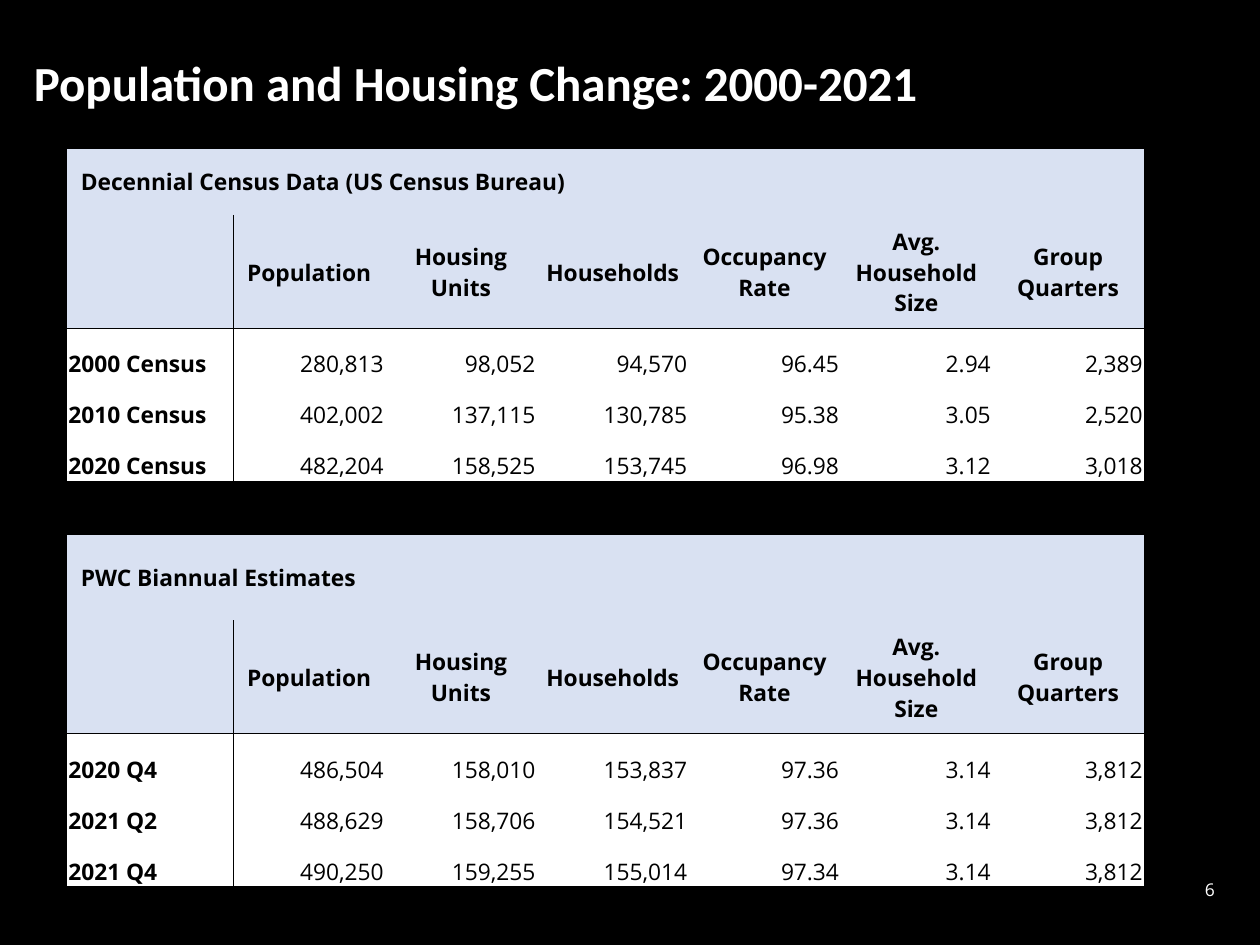
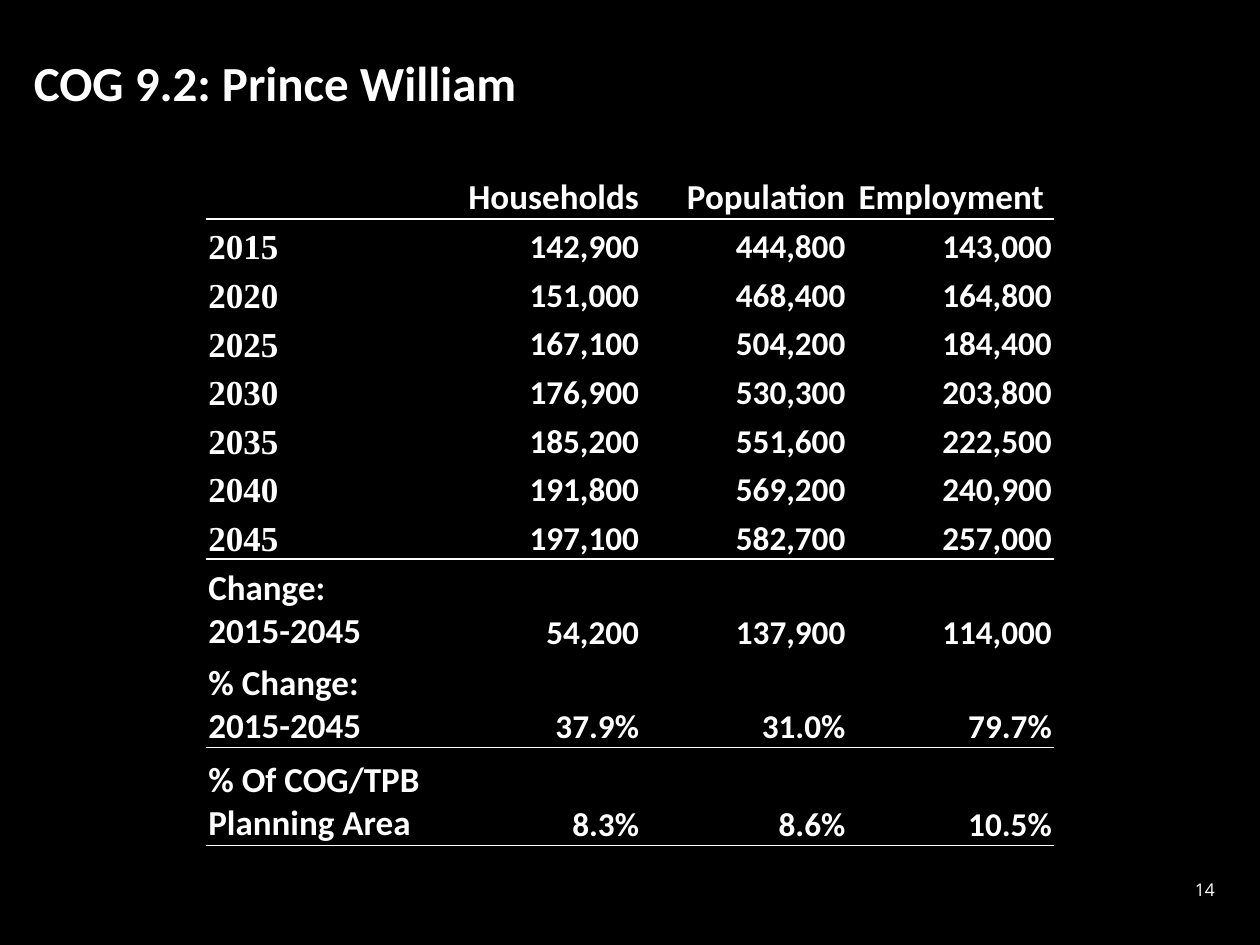
from dataclasses import dataclass, field

from lxml import etree
from pptx import Presentation
from pptx.dml import color
from pptx.enum import text as t
from pptx.oxml import ns
from pptx.util import Cm, Pt


@dataclass(frozen=True)
class Theme:
    black: str = "000000"
    white: str = "FFFFFF"
    header_fill: str = "D9E1F2"
    heading_font: str = "Calibri"
    body_font: str = "Open Sans"
    year_font: str = "Times New Roman"
    title_size: float = 28
    number_size: float = 10
    census_size: float = 13
    forecast_size: float = 20
    value_size: float = 19
    thin: float = 0.5
    rule: float = 1
    plain_table: str = "{2D5ABB26-0587-4C30-8999-92F81FD0307C}"


THEME = Theme()


@dataclass(frozen=True)
class Style:
    name: str
    size: float
    ink: str
    bold: bool = True
    align: t.PP_ALIGN = t.PP_ALIGN.LEFT
    anchor: t.MSO_ANCHOR = t.MSO_ANCHOR.BOTTOM


@dataclass(frozen=True)
class Edge:
    ink: str
    width: float


@dataclass(frozen=True)
class Look:
    style: Style
    margins: tuple[float, float, float, float]
    fill: str | None = None
    edges: dict[str, Edge] = field(default_factory=dict)


@dataclass(frozen=True)
class CensusBlock:
    heading: str
    span: int
    heading_height: float
    rows: list[list[str]]


RIGHT, CENTER = t.PP_ALIGN.RIGHT, t.PP_ALIGN.CENTER
MIDDLE = t.MSO_ANCHOR.MIDDLE

TITLE = Style(THEME.heading_font, THEME.title_size, THEME.white, anchor=t.MSO_ANCHOR.TOP)
NUMBER = Style(THEME.body_font, THEME.number_size, THEME.white, False, RIGHT, MIDDLE)

CENSUS = (THEME.body_font, THEME.census_size, THEME.black)
CENSUS_HEADING = Style(*CENSUS, anchor=MIDDLE)
CENSUS_COLUMN = Style(*CENSUS, align=CENTER, anchor=MIDDLE)
CENSUS_LABEL = Style(*CENSUS)
CENSUS_VALUE = Style(*CENSUS, bold=False, align=RIGHT)

FORECAST_COLUMN = Style(THEME.heading_font, THEME.forecast_size, THEME.white, align=RIGHT)
FORECAST_LABEL = Style(THEME.heading_font, THEME.forecast_size, THEME.white)
FORECAST_YEAR = Style(THEME.year_font, THEME.forecast_size, THEME.white)
FORECAST_VALUE = Style(THEME.heading_font, THEME.value_size, THEME.white, align=RIGHT)

HEADING_MARGINS = (0.28, 0.13, 0.28, 0.13)
CENSUS_MARGINS = (0.03, 0.03, 0.03, 0)
FORECAST_MARGINS = (0.05, 0.05, 0.05, 0)
EDGE_TAGS = ("lnL", "lnR", "lnT", "lnB")

CENSUS_COLUMNS = ["", "Population", "Housing Units", "Households",
                  "Occupancy Rate", "Avg. Household Size", "Group Quarters"]
CENSUS_BLOCKS = [
    CensusBlock("Decennial Census Data (US Census Bureau)", 4, 1.33, [
        ["2000 Census", "280,813", "98,052", "94,570", "96.45", "2.94", "2,389"],
        ["2010 Census", "402,002", "137,115", "130,785", "95.38", "3.05", "2,520"],
        ["2020 Census", "482,204", "158,525", "153,745", "96.98", "3.12", "3,018"],
    ]),
    CensusBlock("PWC Biannual Estimates", 2, 1.71, [
        ["2020 Q4", "486,504", "158,010", "153,837", "97.36", "3.14", "3,812"],
        ["2021 Q2", "488,629", "158,706", "154,521", "97.36", "3.14", "3,812"],
        ["2021 Q4", "490,250", "159,255", "155,014", "97.34", "3.14", "3,812"],
    ]),
]

FORECAST_ROWS = [
    ["", "Households", "Population", "Employment "],
    ["2015", "142,900", "444,800", "143,000"],
    ["2020", "151,000", "468,400", "164,800"],
    ["2025", "167,100", "504,200", "184,400"],
    ["2030", "176,900", "530,300", "203,800"],
    ["2035", "185,200", "551,600", "222,500"],
    ["2040", "191,800", "569,200", "240,900"],
    ["2045", "197,100", "582,700", "257,000"],
    ["Change:\v2015-2045", "54,200", "137,900", "114,000"],
    ["% Change:\v2015-2045", "37.9%", "31.0%", "79.7%"],
    ["% Of COG/TPB Planning Area", "8.3%", "8.6%", "10.5%"],
]
FORECAST_RULED = {0, 7, 9, 10}


def write(frame, words: str, style: Style) -> None:
    frame.text = words
    formats = {"name": style.name, "size": Pt(style.size), "bold": style.bold}
    for para in frame.paragraphs:
        para.alignment = style.align
        for span in para.runs:
            for key, value in formats.items():
                setattr(span.font, key, value)
            span.font.color.rgb = color.RGBColor.from_string(style.ink)


def place(box, left: float, top: float, width: float, height: float) -> None:
    for key, value in {"left": left, "top": top, "width": width, "height": height}.items():
        setattr(box, key, Cm(value))


def draw_edges(cell, edges: dict[str, Edge]) -> None:
    properties = cell._tc.get_or_add_tcPr()
    for index, tag in enumerate(EDGE_TAGS):
        line = etree.Element(ns.qn(f"a:{tag}"))
        edge = edges.get(tag)
        if edge:
            line.set("w", str(Pt(edge.width)))
            fill = etree.SubElement(line, ns.qn("a:solidFill"))
            etree.SubElement(fill, ns.qn("a:srgbClr"), val=edge.ink)
        else:
            line.set("w", "0")
            etree.SubElement(line, ns.qn("a:noFill"))
        properties.insert(index, line)


def draw_cell(cell, words: str, look: Look) -> None:
    sides = ("margin_left", "margin_top", "margin_right", "margin_bottom")
    for side, margin in zip(sides, look.margins):
        setattr(cell, side, Cm(margin))
    cell.vertical_anchor = look.style.anchor
    if words:
        write(cell.text_frame, words, look.style)
    if look.fill:
        cell.fill.solid()
        cell.fill.fore_color.rgb = color.RGBColor.from_string(look.fill)
    else:
        cell.fill.background()
    draw_edges(cell, look.edges)


def add_grid(page, left: float, top: float, widths: list[float], heights: list[float]):
    frame = page.shapes.add_table(len(heights), len(widths), Cm(left), Cm(top),
                                  Cm(sum(widths)), Cm(sum(heights)))
    table = frame.table
    for key in ("first_row", "horz_banding"):
        setattr(table, key, False)
    table._tbl.tblPr.find(ns.qn("a:tableStyleId")).text = THEME.plain_table
    for column, width in zip(table.columns, widths):
        column.width = Cm(width)
    for row, height in zip(table.rows, heights):
        row.height = Cm(height)
    return table


def add_page(deck, title: str, number: int):
    page = deck.slides.add_slide(deck.slide_layouts[5])
    box = page.shapes.title
    place(box, 0.43, 0.94, 23.7, 1.45)
    box.text_frame.vertical_anchor = TITLE.anchor
    box.text_frame.auto_size = t.MSO_AUTO_SIZE.SHAPE_TO_FIT_TEXT
    write(box.text_frame, title, TITLE)
    box = page.shapes.add_textbox(Cm(23.57), Cm(17.42), Cm(1.17), Cm(1.04))
    box.text_frame.word_wrap = True
    box.text_frame.vertical_anchor = NUMBER.anchor
    write(box.text_frame, str(number), NUMBER)
    return page


def census_edges(column: int, ruled: dict[str, Edge]) -> dict[str, Edge]:
    divider = Edge(THEME.black, THEME.thin)
    vertical = {0: {"lnR": divider}, 1: {"lnL": divider}}
    return {**vertical.get(column, {}), **ruled}


def draw_census_block(table, start: int, block: CensusBlock) -> None:
    rule = Edge(THEME.black, THEME.rule)
    for column, words in enumerate(CENSUS_COLUMNS):
        heading = block.heading if column == 0 else ""
        draw_cell(table.cell(start, column), heading,
                  Look(CENSUS_HEADING, HEADING_MARGINS, THEME.header_fill))
        draw_cell(table.cell(start + 1, column), words,
                  Look(CENSUS_COLUMN, CENSUS_MARGINS, THEME.header_fill,
                       census_edges(column, {"lnB": rule})))
    table.cell(start, 0).merge(table.cell(start, block.span - 1))
    last = len(block.rows) - 1
    for index, row in enumerate(block.rows):
        ruled = {0: {"lnT": rule}, last: {"lnB": rule}}.get(index, {})
        for column, words in enumerate(row):
            style = CENSUS_VALUE if column else CENSUS_LABEL
            draw_cell(table.cell(start + 2 + index, column), words,
                      Look(style, CENSUS_MARGINS, THEME.white, census_edges(column, ruled)))


def build_census(deck) -> None:
    page = add_page(deck, "Population and Housing Change: 2000-2021", 6)
    first, second = ([block.heading_height, 2.29] + [1.03] * len(block.rows)
                     for block in CENSUS_BLOCKS)
    gap = len(first)
    table = add_grid(page, 1.35, 3, [3.35] + [3.06] * 6, first + [1.08] + second)
    rule = Edge(THEME.black, THEME.rule)
    for column in range(len(CENSUS_COLUMNS)):
        draw_cell(table.cell(gap, column), "",
                  Look(CENSUS_LABEL, CENSUS_MARGINS, edges={"lnT": rule}))
    for start, block in zip((0, gap + 1), CENSUS_BLOCKS):
        draw_census_block(table, start, block)


def forecast_style(row: int, column: int, label: str) -> Style:
    if row == 0:
        return FORECAST_COLUMN
    if column:
        return FORECAST_VALUE
    return FORECAST_YEAR if label.isdigit() else FORECAST_LABEL


def build_forecast(deck) -> None:
    page = add_page(deck, "COG 9.2: Prince William", 14)
    table = add_grid(page, 4.15, 3.43, [4.62] + [4.16] * 3,
                     [0.98] * 8 + [1.9] * 2 + [1.97])
    rule = Edge(THEME.white, THEME.rule)
    for index, row in enumerate(FORECAST_ROWS):
        edges = {tag: rule for tag, line in (("lnT", index - 1), ("lnB", index))
                 if line in FORECAST_RULED}
        for column, words in enumerate(row):
            style = forecast_style(index, column, row[0])
            draw_cell(table.cell(index, column), words,
                      Look(style, FORECAST_MARGINS, edges=edges))


def main() -> None:
    deck = Presentation()
    deck.slide_width, deck.slide_height = Cm(25.4), Cm(19.05)
    background = deck.slide_master.background.fill
    background.solid()
    background.fore_color.rgb = color.RGBColor.from_string(THEME.black)
    build_census(deck)
    build_forecast(deck)
    deck.save("out.pptx")


if __name__ == "__main__":
    main()
